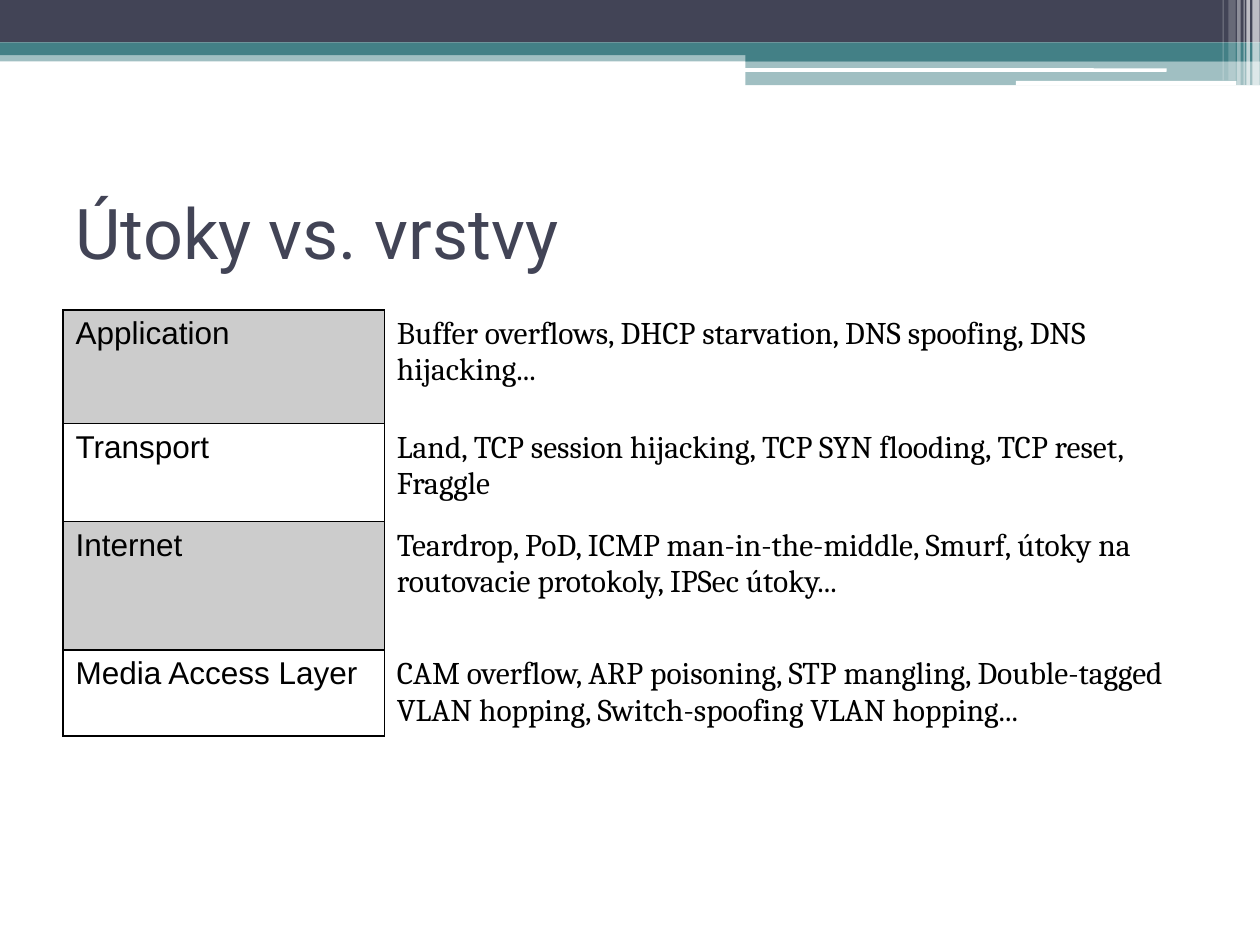
from dataclasses import dataclass

from lxml.etree import SubElement
from pptx import Presentation
from pptx.dml.color import RGBColor
from pptx.enum.shapes import MSO_SHAPE
from pptx.enum.text import MSO_ANCHOR, PP_ALIGN
from pptx.oxml.ns import qn
from pptx.util import Pt


@dataclass(frozen=True)
class Theme:
    """Colours, fonts and type sizes of the slide."""
    navy: str = "424456"
    teal: str = "438086"
    white: str = "FFFFFF"
    black: str = "000000"
    title_font: str = "Roboto"
    layer_font: str = "Arial"
    attack_font: str = "Cambria"
    title_size: int = 40
    table_size: int = 18
    border: int = 1


THEME = Theme()

BANDS = [
    (0, 28.8, 720, 6.3, THEME.teal, 50),
    (0, 0, 720, 24.3, THEME.navy, 100),
    (0, 24.3, 720, 7.2, THEME.teal, 100),
    (426, 28, 294, 7.2, THEME.teal, 100),
    (426, 35.2, 294, 13.5, THEME.teal, 50),
]
GROOVES = [(425.5, 39, 241.2, 2), (580.5, 46.2, 126, 2.6)]
STRIPES = [
    (715.6, 4.2, 48.7, 65),
    (712.2, 2, 48.7, 65),
    (710.6, 0.7, 48.7, 60),
    (707, 2, 48.7, 40),
    (702, 4.2, 46, 20),
    (698.6, 0.7, 46, 30),
]
COLUMN_WIDTHS = (183.6, 464.4)
LAYERS = [
    (65, "Application",
     "Buffer overflows, DHCP starvation, DNS spoofing, DNS hijacking..."),
    (56, "Transport",
     "Land, TCP session hijacking, TCP SYN flooding, TCP reset, Fraggle"),
    (73.4, "Internet",
     "Teardrop, PoD, ICMP man-in-the-middle, Smurf, útoky na "
     "routovacie protokoly, IPSec útoky..."),
    (49, "Media Access Layer",
     "CAM overflow, ARP poisoning, STP mangling, Double-tagged "
     "VLAN hopping, Switch-spoofing VLAN hopping..."),
]


def paint(fill, properties, color, opacity=100):
    """Give a fill a solid colour with an opacity in percent."""
    fill.solid()
    fill.fore_color.rgb = RGBColor.from_string(color)
    if opacity < 100:
        tint = properties.find(qn("a:solidFill")).find(qn("a:srgbClr"))
        SubElement(tint, qn("a:alpha")).set("val", str(opacity * 1000))


def add_bar(slide, left, top, width, height, color, opacity=100,
            kind=MSO_SHAPE.RECTANGLE):
    """Add a borderless bar of the header decoration."""
    bar = slide.shapes.add_shape(
        kind, Pt(left), Pt(top), Pt(width), Pt(height))
    bar.shadow.inherit = False
    bar.line.fill.background()
    paint(bar.fill, bar.element.spPr, color, opacity)


def add_header(slide):
    """Draw the bands, the white grooves and the stripes at the right."""
    for band in BANDS:
        add_bar(slide, *band)
    for groove in GROOVES:
        add_bar(slide, *groove, THEME.white, kind=MSO_SHAPE.ROUNDED_RECTANGLE)
    for left, width, height, opacity in STRIPES:
        add_bar(slide, left, 0, width, height, THEME.white, opacity)


def style_text(paragraph, font, size, color):
    """Format every run of a paragraph."""
    for run in paragraph.runs:
        run.font.name = font
        run.font.size = Pt(size)
        run.font.color.rgb = RGBColor.from_string(color)


def set_title(slide, text):
    """Fill and place the title placeholder."""
    title = slide.shapes.title
    title.left, title.top, title.width, title.height = (
        Pt(36), Pt(90), Pt(648), Pt(84.2))
    frame = title.text_frame
    frame.text = text
    frame.vertical_anchor = MSO_ANCHOR.MIDDLE
    frame.paragraphs[0].alignment = PP_ALIGN.LEFT
    style_text(frame.paragraphs[0], THEME.title_font, THEME.title_size,
               THEME.navy)


def set_borders(cell, visible_sides):
    """Draw the named sides of a cell and clear the others."""
    properties = cell._tc.get_or_add_tcPr()
    for side in "LRTB":
        line = SubElement(properties, qn(f"a:ln{side}"))
        if side in visible_sides:
            line.set("w", str(Pt(THEME.border)))
            solid = SubElement(line, qn("a:solidFill"))
            SubElement(solid, qn("a:srgbClr")).set("val", THEME.black)
        else:
            SubElement(line, qn("a:noFill"))


def fill_cell(cell, text, font, visible_sides, shaded):
    """Write and format one cell."""
    set_borders(cell, visible_sides)
    if shaded:
        paint(cell.fill, cell._tc.tcPr, THEME.black, 20)
    else:
        cell.fill.background()
    cell.text_frame.text = text
    style_text(cell.text_frame.paragraphs[0], font, THEME.table_size,
               THEME.black)


def add_layer_table(slide):
    """Add the table of network layers and their attacks."""
    table = slide.shapes.add_table(
        len(LAYERS), len(COLUMN_WIDTHS), Pt(36), Pt(177.1),
        Pt(sum(COLUMN_WIDTHS)), Pt(sum(row[0] for row in LAYERS))).table
    table.first_row = table.horz_banding = False
    for column, width in zip(table.columns, COLUMN_WIDTHS):
        column.width = Pt(width)
    for index, (height, layer, attacks) in enumerate(LAYERS):
        table.rows[index].height = Pt(height)
        fill_cell(table.cell(index, 0), layer, THEME.layer_font, "LRTB",
                  shaded=index % 2 == 0)
        fill_cell(table.cell(index, 1), attacks, THEME.attack_font, "L",
                  shaded=False)


def main():
    """Build the slide and save it."""
    deck = Presentation()
    deck.slide_width, deck.slide_height = Pt(720), Pt(540)
    slide = deck.slides.add_slide(deck.slide_layouts.get_by_name("Title Only"))
    add_header(slide)
    set_title(slide, "Útoky vs. vrstvy")
    add_layer_table(slide)
    deck.save("out.pptx")


if __name__ == "__main__":
    main()
